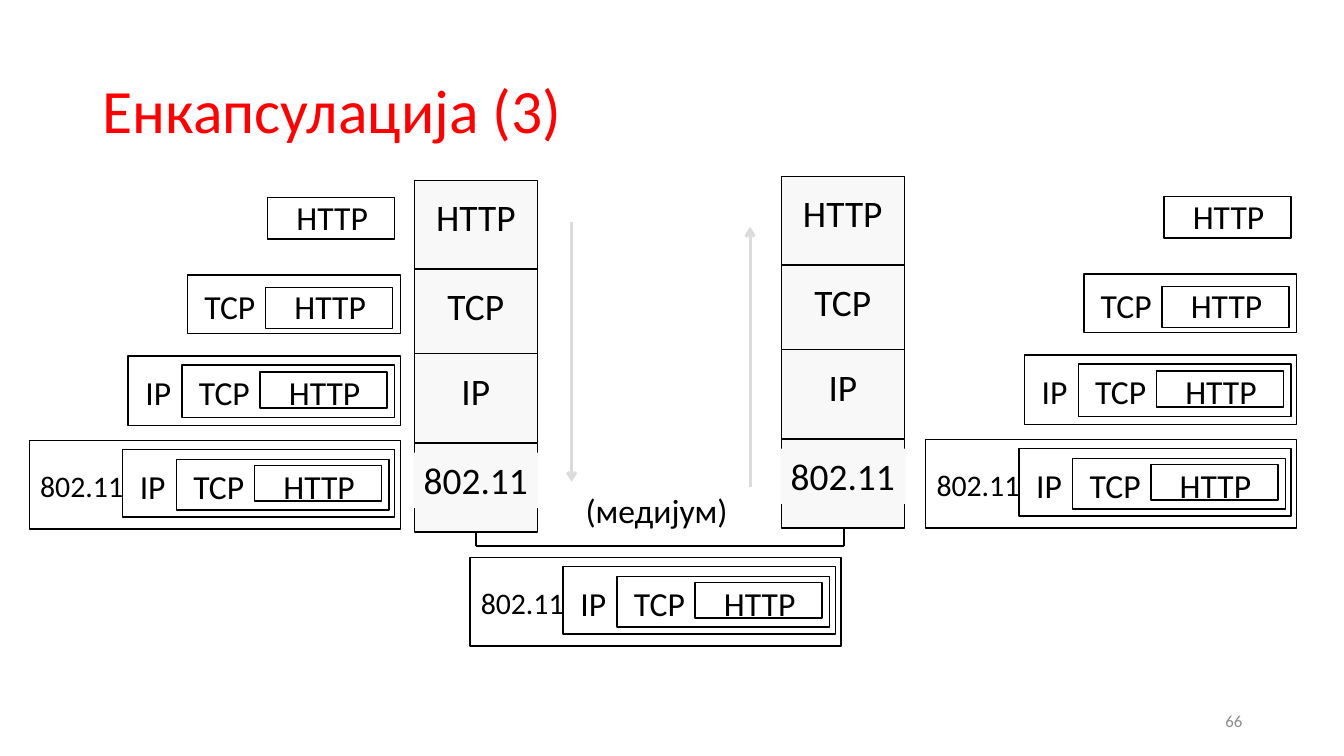
import itertools

import pptx
import pptx.util
import pptx.dml.color
import pptx.enum.shapes
import pptx.enum.text
import pptx.oxml.ns
from lxml import etree

RGB = pptx.dml.color.RGBColor
BLACK = RGB(0, 0, 0)
RED = RGB(0xFF, 0, 0)
GRAY = RGB(0x8C, 0x8C, 0x8C)
SILVER = RGB(0xDB, 0xDB, 0xDB)
PALE = RGB(0xF8, 0xF8, 0xF8)

ALIGN = pptx.enum.text.PP_ALIGN
ANCHOR = pptx.enum.text.MSO_ANCHOR
COLS, ROWS = 1333, 750  # one grid step is a hundredth of an inch

LAYERS = ["HTTP", "TCP", "IP", "802.11"]
# Per layer: width of its box, width of its label, label size
BOXES = {"HTTP": (126, 128, 24), "TCP": (211, 84, 24),
         "IP": (270, 60, 24), "802.11": (368, 104, 21.3)}
# Per packet, named after its outer layer: label row, then (row, height) of
# each box from the outside in
NESTS = {
    "HTTP": (-6, [(0, 41)]),
    "TCP": (6, [(0, 58), (12, 41)]),
    "IP": (11, [(0, 69), (9, 52), (16, 36)]),
    "802.11": (20, [(0, 88), (9, 67), (19, 50), (25, 35)]),
}
CELLS = {"HTTP": (0, 100), "TCP": (88, 77), "IP": (172, 49), "802.11": (261, 124)}
TOPS = {"HTTP": 196, "TCP": 273, "IP": 353, "802.11": 437}


def grid(*steps):
    return [pptx.util.Inches(step / 100) for step in steps]


def box(slide, x, y, w, h, fill=None):
    rect = slide.shapes.add_shape(
        pptx.enum.shapes.MSO_SHAPE.RECTANGLE, *grid(x, y, w, h))
    rect.shadow.inherit = False
    rect.line.color.rgb = BLACK
    rect.line.width = pptx.util.Pt(1)
    if fill is None:
        rect.fill.background()
    else:
        rect.fill.solid()
        rect.fill.fore_color.rgb = fill


def label(slide, text, x, y, w, h, size, color=BLACK, align=ALIGN.CENTER,
          anchor=ANCHOR.TOP, wrap=False):
    area = slide.shapes.add_textbox(*grid(x, y, w, h))
    frame = area.text_frame
    frame.text = text
    frame.word_wrap = wrap
    frame.vertical_anchor = anchor
    par = frame.paragraphs[0]
    par.alignment = align
    font = par.runs[0].font
    font.name = "Calibri"
    font.size = pptx.util.Pt(size)
    font.color.rgb = color
    return area


def line(slide, start, end, color, width, arrow=False):
    link = slide.shapes.add_connector(
        pptx.enum.shapes.MSO_CONNECTOR.STRAIGHT, *grid(*start, *end))
    link.line.color.rgb = color
    link.line.width = pptx.util.Pt(width)
    qn = pptx.oxml.ns.qn
    if arrow:
        etree.SubElement(link.line._get_or_add_ln(), qn("a:tailEnd"), type="arrow")
    etree.SubElement(link._element.spPr, qn("a:effectLst"))


def stack(slide, x, y):
    """Draw the protocol layers as a column of cells."""
    for layer, (row, width) in CELLS.items():
        box(slide, x, y + row, 122, 88, PALE)
        tag = label(slide, layer, x + 61 - width / 2, y + row + 9, width, 55, 26.7)
        tag.fill.solid()
        tag.fill.fore_color.rgb = PALE


def packet(slide, outer, right, top):
    """Draw nested boxes from the outer layer down to HTTP."""
    shift, nest = NESTS[outer]
    inner = LAYERS[LAYERS.index(outer)::-1]
    for depth, (layer, (row, height)) in enumerate(zip(inner, nest)):
        width, span, size = BOXES[layer]
        gap = 5.5 * depth + (2 if layer == "HTTP" and depth else 0)
        left = right - gap - width
        box(slide, left, top + row, width, height)
        drop = 2 if layer == "802.11" else 0
        label(slide, layer, left, top + shift + drop, span, 50, size)


def main():
    deck = pptx.Presentation()
    deck.slide_width, deck.slide_height = grid(COLS, ROWS)
    slide = deck.slides.add_slide(deck.slide_layouts[6])

    title = label(slide, "Енкапсулација (3)", 92, 40, 1150, 145, 44, RED,
                  ALIGN.LEFT, ANCHOR.MIDDLE, True)
    title.text_frame.paragraphs[0].line_spacing = 0.9
    label(slide, "66", 942, 695, 300, 40, 12, GRAY, ALIGN.RIGHT,
          ANCHOR.MIDDLE, True)

    stack(slide, 411, 179)
    stack(slide, 775, 175)
    line(slide, (567, 220), (567, 478), SILVER, 2.25, True)
    line(slide, (744, 483), (744, 225), SILVER, 2.25, True)

    medium = [(472, 527), (472, 542), (837, 542), (837, 523)]
    for start, end in itertools.pairwise(medium):
        line(slide, start, end, BLACK, 1.5)
    label(slide, "(медијум)", 571, 481, 163, 50, 24, align=ALIGN.LEFT)

    for right, lift in ((397, 0), (1286, 1)):
        for layer, top in TOPS.items():
            inset = 5.5 if layer == "HTTP" else 0
            packet(slide, layer, right - inset, top - lift)
    packet(slide, "802.11", 834, 553)

    deck.save("out.pptx")


if __name__ == "__main__":
    main()
